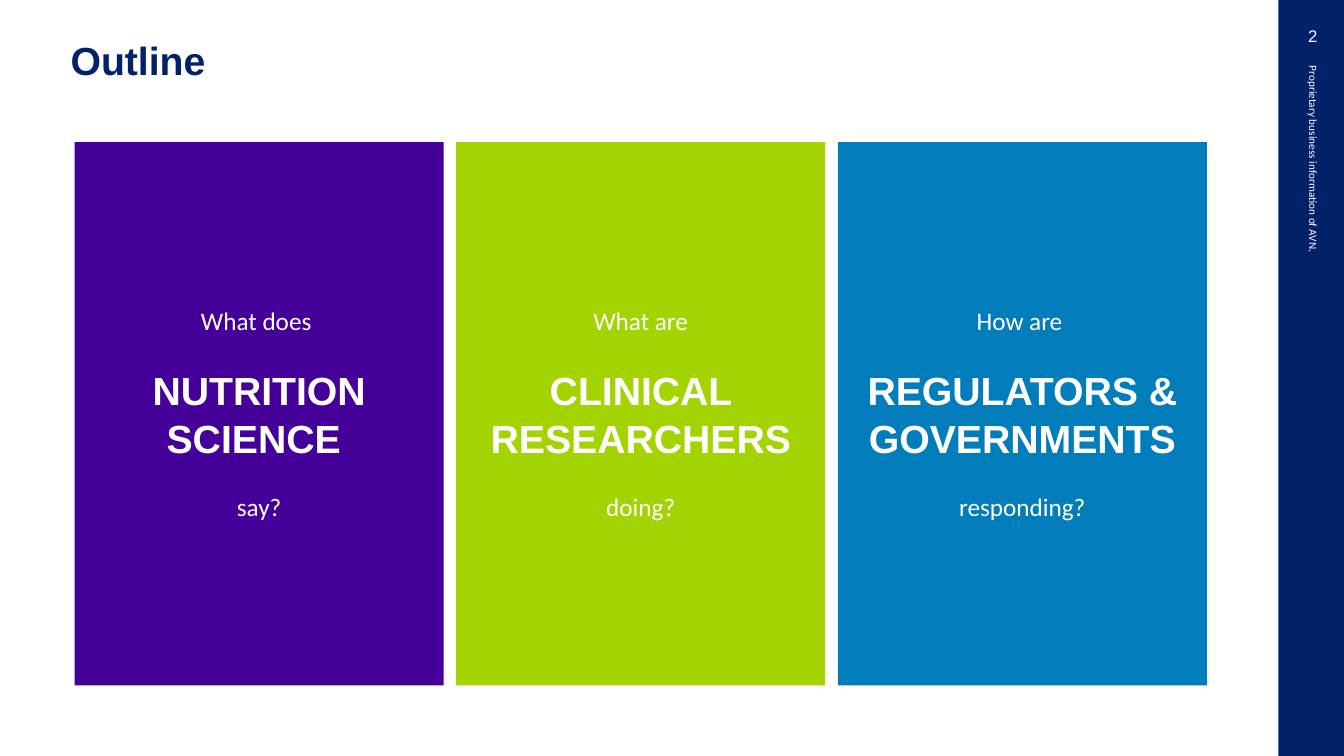
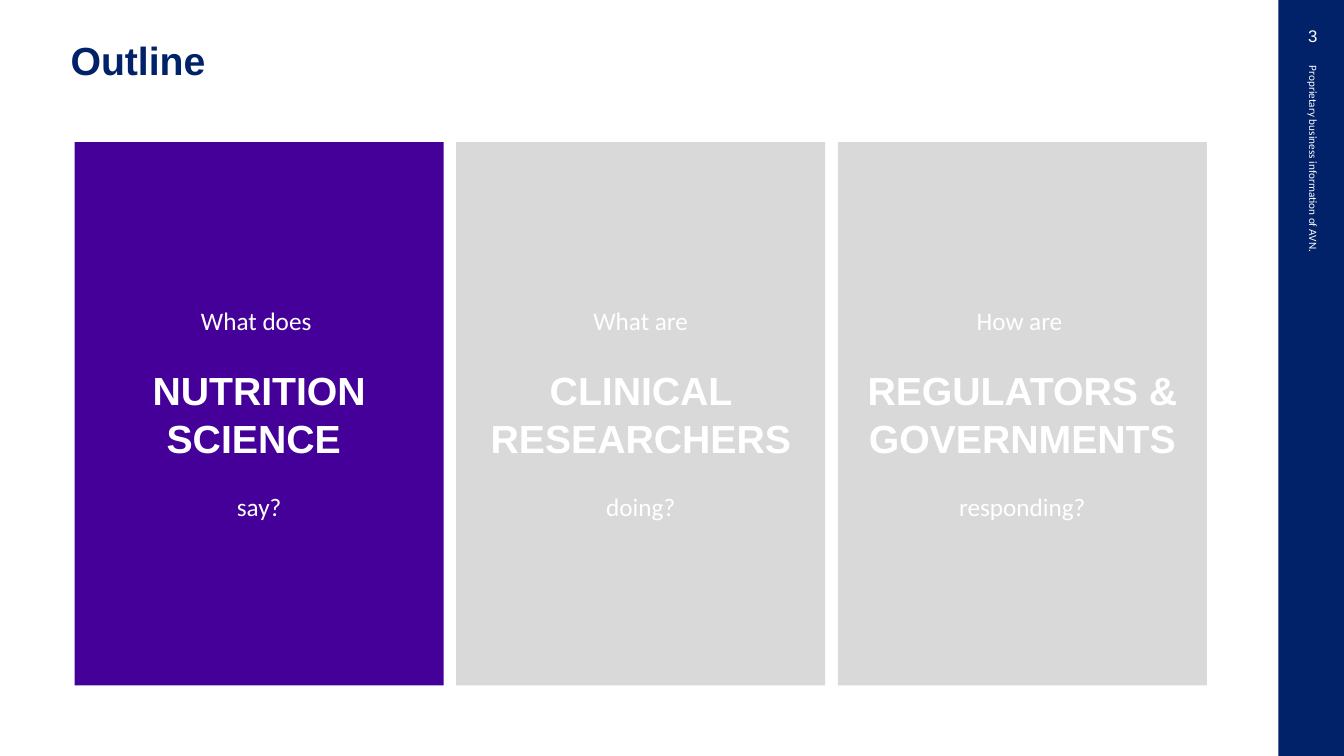
import pptx
import pptx.util
import pptx.dml.color
import pptx.enum.shapes
import pptx.enum.text

Inches = pptx.util.Inches
Pt = pptx.util.Pt
ALIGN = pptx.enum.text.PP_ALIGN
ANCHOR = pptx.enum.text.MSO_ANCHOR
RECT = pptx.enum.shapes.MSO_SHAPE.RECTANGLE

COLORS = {
    "navy": "012169",
    "purple": "440099",
    "lime": "A3D300",
    "blue": "007DBA",
    "gray": "D9D9D9",
    "white": "FFFFFF",
}
TITLE = "Outline"
FOOTER = "Proprietary business information of AVN."
CARDS = [
    ("What does ", "NUTRITION SCIENCE ", "say?"),
    ("What are", "CLINICAL RESEARCHERS", "doing?"),
    ("How are ", "REGULATORS & GOVERNMENTS", "responding?"),
]
SLIDES = [
    (2, ["purple", "lime", "blue"]),
    (3, ["purple", "gray", "gray"]),
]
LEFT, RIGHT, TOP = 0.74, 11.97, 1.41
WIDTH, HEIGHT = 3.66, 5.39
GAP = (RIGHT - LEFT - len(CARDS) * WIDTH) / (len(CARDS) - 1)


def rgb(name):
    return pptx.dml.color.RGBColor.from_string(COLORS[name])


def write(para, text, size, face="Calibri", color="white", bold=False, align=ALIGN.LEFT):
    para.alignment = align
    run = para.add_run()
    run.text = text
    font = run.font
    font.size, font.name, font.bold = Pt(size), face, bold
    font.color.rgb = rgb(color)


def add_rect(slide, box, color):
    shape = slide.shapes.add_shape(RECT, *map(Inches, box))
    shape.shadow.inherit = False
    shape.fill.solid()
    shape.fill.fore_color.rgb = rgb(color)
    shape.line.fill.background()
    return shape


def add_label(slide, box, text, size, **style):
    label = slide.shapes.add_textbox(*map(Inches, box))
    label.text_frame.word_wrap = True
    write(label.text_frame.paragraphs[0], text, size, **style)
    return label


def add_frame(slide, number):
    add_rect(slide, (12.68, 0, 0.65, 7.5), "navy")
    add_label(slide, (11.01, 2.39, 3.97, 0.3), FOOTER, 8).rotation = 90
    add_label(slide, (12.7, 0.21, 0.64, 0.54), str(number), 12,
              face="Arial", align=ALIGN.CENTER)
    title = slide.shapes.title
    title.left, title.top = Inches(0.6), Inches(0.36)
    title.width, title.height = Inches(11.92), Inches(1)
    title.text_frame.vertical_anchor = ANCHOR.TOP
    para = title.text_frame.paragraphs[0]
    para.line_spacing = 0.9
    write(para, TITLE, 28, face="Arial", color="navy", bold=True)


def add_card(slide, index, color):
    left = LEFT + index * (WIDTH + GAP)
    frame = add_rect(slide, (left, TOP, WIDTH, HEIGHT), color).text_frame
    frame.word_wrap = True
    frame.vertical_anchor = ANCHOR.MIDDLE
    lead, topic, close = CARDS[index]
    write(frame.paragraphs[0], lead, 18, align=ALIGN.CENTER)
    for text, size, face, bold in [(topic, 28, "Arial", True), (close, 18, "Calibri", False)]:
        para = frame.add_paragraph()
        para.space_before = Pt(22)
        write(para, text, size, face=face, bold=bold, align=ALIGN.CENTER)


def main():
    deck = pptx.Presentation()
    deck.slide_width, deck.slide_height = Inches(13.33), Inches(7.5)
    for number, colors in SLIDES:
        slide = deck.slides.add_slide(deck.slide_layouts[5])
        add_frame(slide, number)
        for index, color in enumerate(colors):
            add_card(slide, index, color)
    deck.save("out.pptx")


if __name__ == "__main__":
    main()
